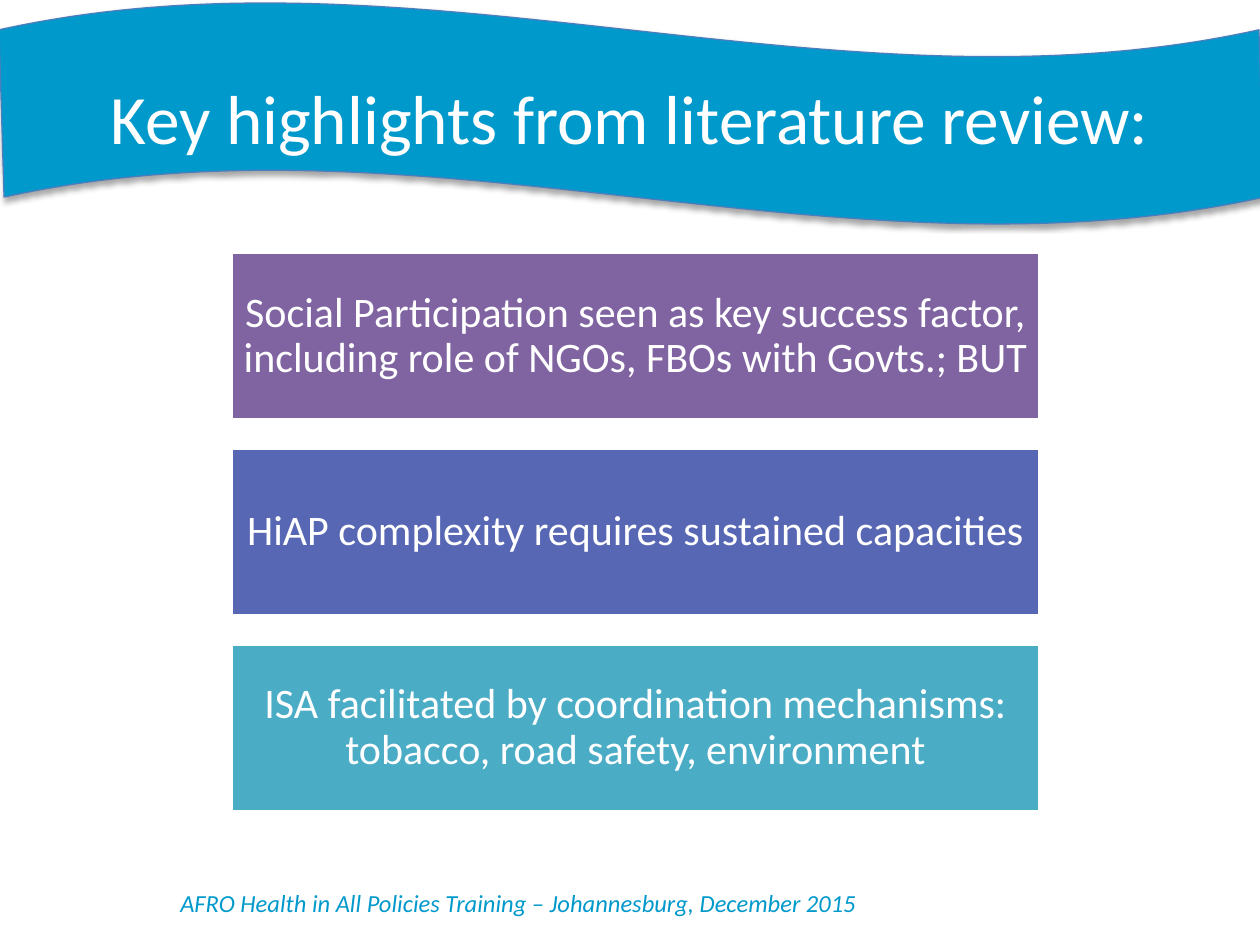
from dataclasses import dataclass

from lxml import etree
from pptx import Presentation
from pptx.dml.color import RGBColor
from pptx.enum.shapes import MSO_SHAPE
from pptx.enum.text import MSO_ANCHOR, PP_ALIGN
from pptx.oxml.ns import qn
from pptx.util import Pt

RECT, WAVE = MSO_SHAPE.RECTANGLE, MSO_SHAPE.WAVE
MIDDLE, TOP = MSO_ANCHOR.MIDDLE, MSO_ANCHOR.TOP
CENTER = PP_ALIGN.CENTER
TITLE_ONLY = 5


def px(n):
    return round(n * 914400 / 126)


@dataclass(frozen=True)
class Theme:
    font: str = "Calibri"
    brand: str = "0099CC"
    outline: str = "4B7EBC"
    white: str = "FFFFFF"
    purple: str = "8064A2"
    indigo: str = "5767B4"
    teal: str = "4BACC6"
    title_size: float = 39.6
    box_size: float = 24
    footer_size: float = 14


class Deck:
    def __init__(self, prs, theme):
        self.theme = theme
        self.slide = prs.slides.add_slide(prs.slide_layouts[TITLE_ONLY])

    def set_text(self, sp, text, size, color, anchor=MIDDLE, italic=False, spacing=1.0):
        tf = sp.text_frame
        tf.word_wrap = True
        tf.vertical_anchor = anchor
        p = tf.paragraphs[0]
        p.alignment = CENTER
        p.line_spacing = spacing
        r = p.add_run()
        r.text = text
        r.font.name = self.theme.font
        r.font.size = Pt(size)
        r.font.italic = italic
        r.font.color.rgb = RGBColor.from_string(color)

    def shape(self, kind, x, y, w, h, fill, line, width):
        sp = self.slide.shapes.add_shape(kind, px(x), px(y), px(w), px(h))
        sp.shadow.inherit = False
        sp.fill.solid()
        sp.fill.fore_color.rgb = RGBColor.from_string(fill)
        sp.line.color.rgb = RGBColor.from_string(line)
        sp.line.width = Pt(width)
        return sp

    def banner(self, x, y, w, h):
        sp = self.shape(WAVE, x, y, w, h, self.theme.brand, self.theme.outline, 0.75)
        sp.adjustments[0] = 0.125
        sp.adjustments[1] = 0.002
        effects = sp._element.spPr.find(qn("a:effectLst"))
        shadow = etree.SubElement(effects, qn("a:outerShdw"), blurRad=str(Pt(3.1)),
                                  dist=str(Pt(1.8)), dir="5400000", rotWithShape="0")
        color = etree.SubElement(shadow, qn("a:srgbClr"), val="000000")
        etree.SubElement(color, qn("a:alpha"), val="35000")

    def title(self, text, x, y, w, h):
        sp = self.slide.shapes.title
        sp.left, sp.top, sp.width, sp.height = px(x), px(y), px(w), px(h)
        self.set_text(sp, text, self.theme.title_size, self.theme.white)
        # The title has to lie in front of the banner.
        self.slide.shapes._spTree.append(sp._element)

    def box(self, text, x, y, w, h, fill):
        sp = self.shape(RECT, x, y, w, h, fill, self.theme.white, 2)
        tf = sp.text_frame
        tf.margin_left = tf.margin_right = tf.margin_top = tf.margin_bottom = px(12)
        self.set_text(sp, text, self.theme.box_size, self.theme.white, spacing=0.9)

    def footer(self, text, x, y, w, h):
        sp = self.slide.shapes.add_textbox(px(x), px(y), px(w), px(h))
        self.set_text(sp, text, self.theme.footer_size, self.theme.brand, TOP, italic=True)


def main():
    prs = Presentation()
    prs.slide_width, prs.slide_height = px(1260), px(945)
    theme = Theme()
    deck = Deck(prs, theme)

    deck.footer("AFRO Health in All Policies Training – Johannesburg, December 2015",
                10, 882, 1017, 43)
    deck.banner(-1, 2, 1265, 223)
    deck.title("Key highlights from literature review:", 63, 38, 1134, 158)

    highlights = [
        ("Social Participation seen as key success factor, "
         "including role of NGOs, FBOs with Govts.; BUT", theme.purple),
        ("HiAP complexity requires sustained capacities", theme.indigo),
        ("ISA facilitated by coordination mechanisms: "
         "tobacco, road safety, environment", theme.teal),
    ]
    top, height, gap = 252, 168, 28
    for i, (text, fill) in enumerate(highlights):
        deck.box(text, 231, top + i * (height + gap), 809, height, fill)

    prs.save("out.pptx")


if __name__ == "__main__":
    main()
